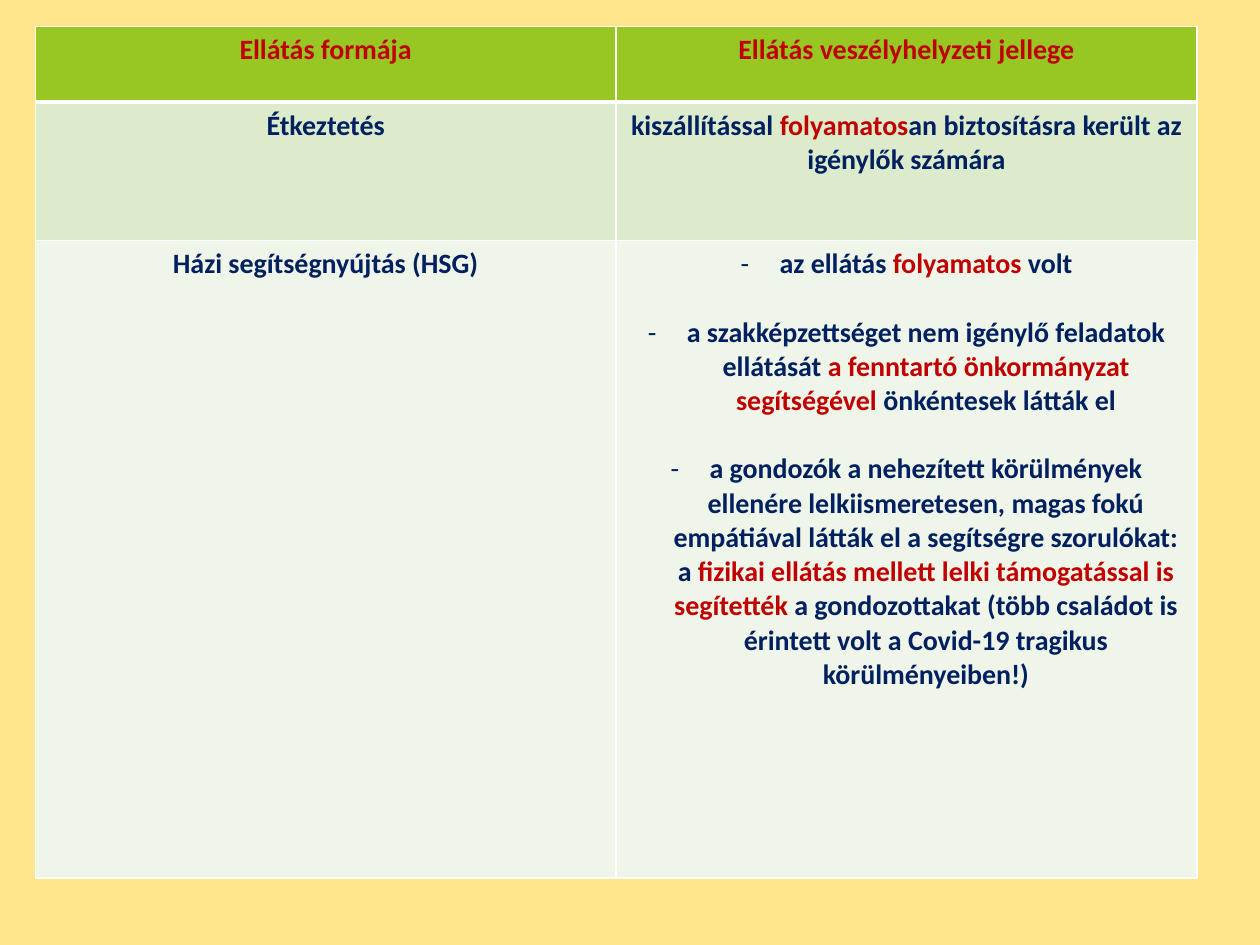
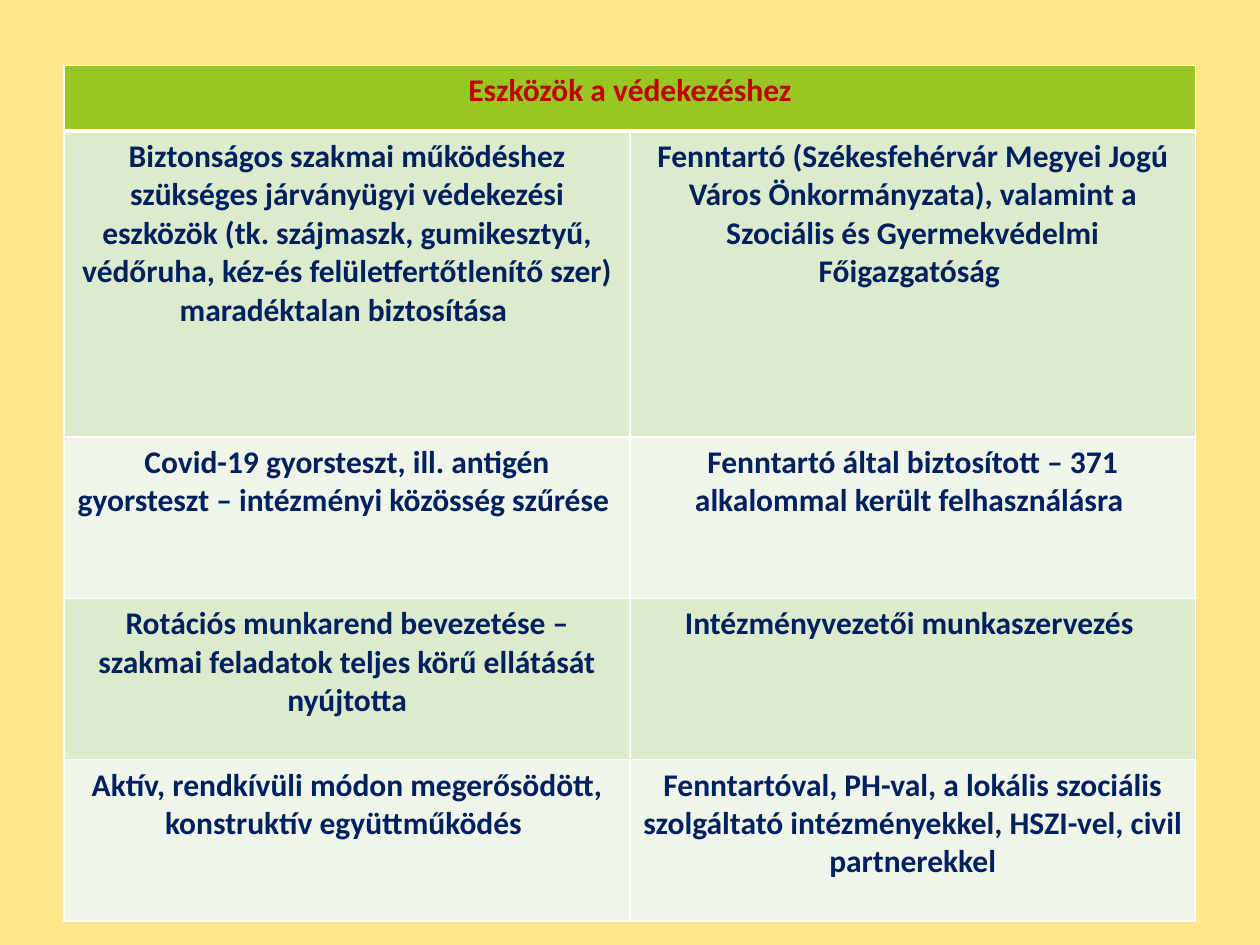
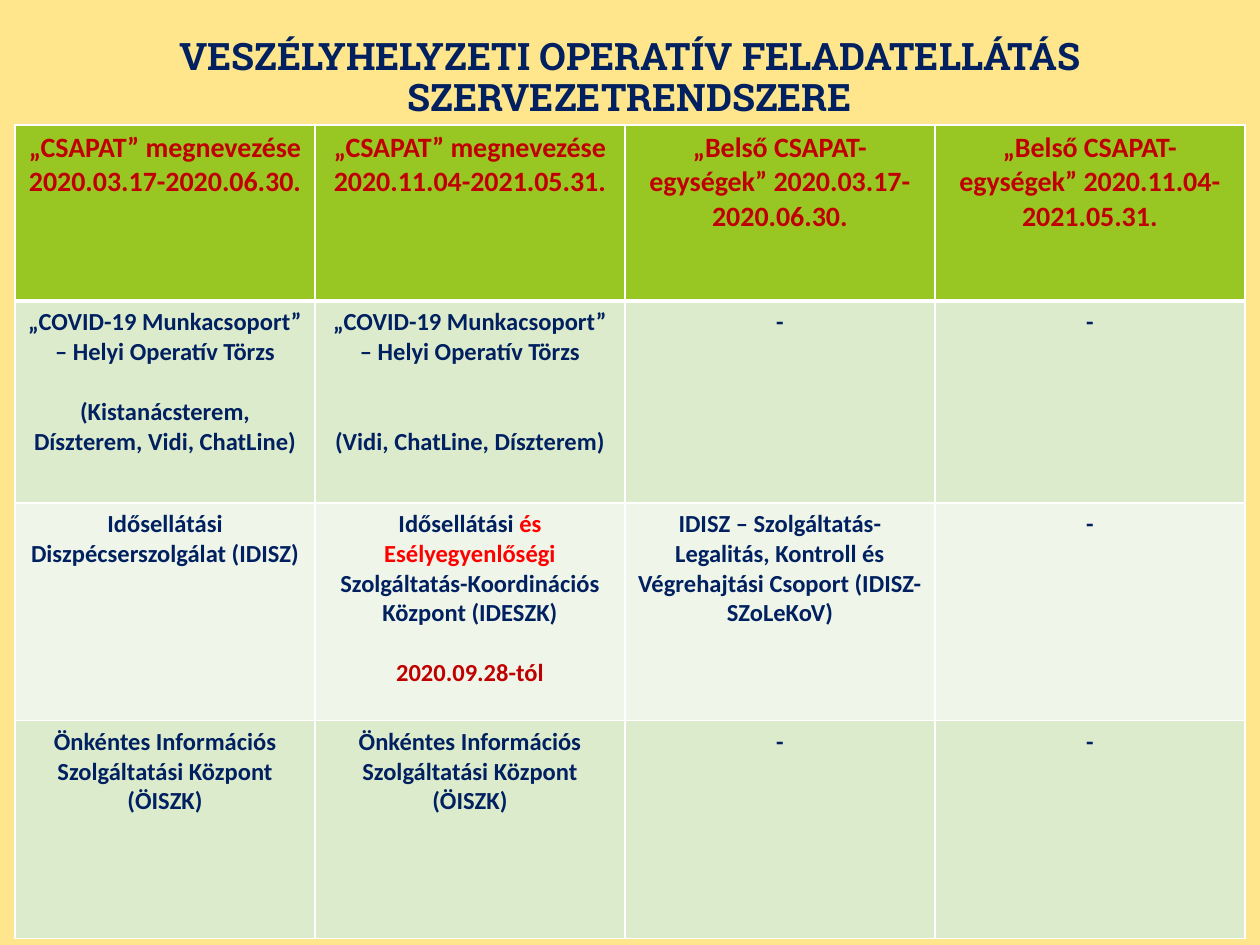
from dataclasses import dataclass

from lxml.etree import SubElement
from pptx import Presentation
from pptx.dml.color import RGBColor
from pptx.enum.text import MSO_ANCHOR, PP_ALIGN
from pptx.oxml.ns import qn
from pptx.util import Inches, Pt

CREAM = RGBColor(0xFF, 0xE6, 0x8C)
HEADER_GREEN = RGBColor(0x98, 0xC7, 0x23)
BANDS = (RGBColor(0xDD, 0xEB, 0xCD), RGBColor(0xEF, 0xF5, 0xE8))
NAVY = RGBColor(0x00, 0x20, 0x60)
DARK_RED = RGBColor(0xC0, 0x00, 0x00)
BRIGHT_RED = RGBColor(0xFF, 0x00, 0x00)
WHITE = RGBColor(0xFF, 0xFF, 0xFF)
TABLE_FONT = "Calibri"
TITLE_FONT = "Roboto Slab"
LINE_FACTOR = 1.22
DASH_INDENT = Inches(0.31)


@dataclass
class Span:
    text: str
    color: RGBColor = DARK_RED


@dataclass
class Line:
    spans: tuple
    gap_lines: int = 0
    dash: bool = False


CARE_ROWS = [
    ["Ellátás formája", "Ellátás veszélyhelyzeti jellege"],
    ["Étkeztetés", [Line(("kiszállítással ", Span("folyamatos"),
                          "an biztosításra került az igénylők számára"))]],
    ["Házi segítségnyújtás (HSG)", [
        Line(("az ellátás ", Span("folyamatos"), " volt"), dash=True),
        Line(("a szakképzettséget nem igénylő feladatok ellátását ",
              Span("a fenntartó önkormányzat segítségével"),
              " önkéntesek látták el"), gap_lines=1, dash=True),
        Line(("a gondozók a nehezített körülmények ellenére lelkiismeretesen, "
              "magas fokú empátiával látták el a segítségre szorulókat: a ",
              Span("fizikai ellátás mellett lelki támogatással is segítették"),
              " a gondozottakat (több családot is érintett volt a Covid-19 "
              "tragikus körülményeiben!)"), gap_lines=1, dash=True),
    ]],
]

SUPPLY_ROWS = [
    ["Eszközök a védekezéshez"],
    ["Biztonságos szakmai működéshez szükséges járványügyi védekezési eszközök "
     "(tk. szájmaszk, gumikesztyű, védőruha, kéz-és felületfertőtlenítő szer) "
     "maradéktalan biztosítása ",
     "Fenntartó (Székesfehérvár Megyei Jogú Város Önkormányzata), valamint a "
     "Szociális és Gyermekvédelmi Főigazgatóság "],
    ["Covid-19 gyorsteszt, ill. antigén gyorsteszt – intézményi közösség szűrése ",
     "Fenntartó által biztosított – 371 alkalommal került felhasználásra "],
    ["Rotációs munkarend bevezetése – szakmai feladatok teljes körű ellátását nyújtotta",
     "Intézményvezetői munkaszervezés "],
    ["Aktív, rendkívüli módon megerősödött, konstruktív együttműködés ",
     "Fenntartóval, PH-val, a lokális szociális szolgáltató intézményekkel, "
     "HSZI-vel, civil partnerekkel"],
]

TASK_FORCE = "„COVID-19 Munkacsoport” – Helyi Operatív Törzs"
VOLUNTEER_CENTRE = "Önkéntes Információs Szolgáltatási Központ (ÖISZK)"
TEAM_ROWS = [
    ["„CSAPAT” megnevezése 2020.03.17-2020.06.30.",
     "„CSAPAT” megnevezése 2020.11.04-2021.05.31.",
     "„Belső CSAPAT-egységek” 2020.03.17-2020.06.30.",
     "„Belső CSAPAT-egységek” 2020.11.04-2021.05.31."],
    [[Line((TASK_FORCE,)),
      Line(("(Kistanácsterem, Díszterem, Vidi, ChatLine)",), gap_lines=1)],
     [Line((TASK_FORCE,)), Line(("(Vidi, ChatLine, Díszterem)",), gap_lines=2)],
     "-", "-"],
    ["Idősellátási Diszpécserszolgálat (IDISZ)",
     [Line(("Idősellátási ", Span("és Esélyegyenlőségi ", BRIGHT_RED),
            "Szolgáltatás-Koordinációs Központ (IDESZK)")),
      Line((Span("2020.09.28-tól"),), gap_lines=1)],
     "IDISZ – Szolgáltatás-Legalitás, Kontroll és Végrehajtási Csoport (IDISZ-SZoLeKoV)",
     "-"],
    [VOLUNTEER_CENTRE, VOLUNTEER_CENTRE, "-", "-"],
]


def add_page(deck):
    page = deck.slides.add_slide(deck.slide_layouts[6])
    page.background.fill.solid()
    page.background.fill.fore_color.rgb = CREAM
    return page


def format_run(run, font_name, size, color):
    run.font.name = font_name
    run.font.size = Pt(size)
    run.font.bold = True
    run.font.color.rgb = color


def add_dash(para):
    properties = para._p.get_or_add_pPr()
    properties.set("marL", str(DASH_INDENT))
    properties.set("indent", str(-DASH_INDENT))
    SubElement(properties, qn("a:buFont"), typeface=TABLE_FONT)
    SubElement(properties, qn("a:buChar"), char="-")


def write_cell(cell, content, size, color):
    lines = [Line((content,))] if isinstance(content, str) else content
    frame = cell.text_frame
    for index, line in enumerate(lines):
        para = frame.add_paragraph() if index else frame.paragraphs[0]
        para.alignment = PP_ALIGN.CENTER
        if line.gap_lines:
            para.space_before = Pt(line.gap_lines * size * LINE_FACTOR)
        if line.dash:
            add_dash(para)
        for part in line.spans:
            span = part if isinstance(part, Span) else Span(part, color)
            run = para.add_run()
            run.text = span.text
            format_run(run, TABLE_FONT, size, span.color)


def add_border(cell, side, width):
    border = SubElement(cell._tc.get_or_add_tcPr(), qn(f"a:ln{side}"), w=str(Pt(width)))
    fill = SubElement(border, qn("a:solidFill"))
    SubElement(fill, qn("a:srgbClr"), val=str(WHITE))


def style_cell(cell, row_index):
    top = 3 if row_index == 1 else 1
    bottom = 3 if row_index == 0 else 1
    for side, width in (("L", 1), ("R", 1), ("T", top), ("B", bottom)):
        add_border(cell, side, width)
    cell.fill.solid()
    cell.fill.fore_color.rgb = BANDS[(row_index - 1) % 2] if row_index else HEADER_GREEN


def add_banded_table(page, left, top, widths, heights, rows, header_size, body_size):
    table = page.shapes.add_table(
        len(heights), len(widths), Inches(left), Inches(top),
        Inches(sum(widths)), Inches(sum(heights))).table
    for column, width in zip(table.columns, widths):
        column.width = Inches(width)
    for row_index, (row, height) in enumerate(zip(table.rows, heights)):
        row.height = Inches(height)
        size, color = (body_size, NAVY) if row_index else (header_size, DARK_RED)
        for cell in row.cells:
            style_cell(cell, row_index)
        for cell, content in zip(row.cells, rows[row_index]):
            write_cell(cell, content, size, color)
    if len(rows[0]) == 1:
        table.cell(0, 0).merge(table.cell(0, len(widths) - 1))


def add_title(page, text):
    box = page.shapes.add_textbox(Inches(0.5), Inches(0.17), Inches(9), Inches(0.83))
    frame = box.text_frame
    frame.word_wrap = True
    frame.vertical_anchor = MSO_ANCHOR.BOTTOM
    frame.text = text
    para = frame.paragraphs[0]
    para.alignment = PP_ALIGN.CENTER
    para.line_spacing = 0.9
    format_run(para.runs[0], TITLE_FONT, 21.6, NAVY)


def main():
    deck = Presentation()
    deck.slide_width = Inches(10)
    deck.slide_height = Inches(7.5)

    add_banded_table(add_page(deck), 0.28, 0.21, [4.61] * 2, [0.6, 1.1, 5.06],
                     CARE_ROWS, 16, 16)
    add_banded_table(add_page(deck), 0.51, 0.52, [4.49] * 2, [0.52, 2.43] + [1.28] * 3,
                     SUPPLY_ROWS, 18, 18)

    team_page = add_page(deck)
    add_title(team_page, "VESZÉLYHELYZETI OPERATÍV FELADATELLÁTÁS SZERVEZETRENDSZERE")
    add_banded_table(team_page, 0.12, 0.99, [2.38] + [2.46] * 3, [1.4, 1.6, 1.73, 1.73],
                     TEAM_ROWS, 16, 14)

    deck.save("out.pptx")


if __name__ == "__main__":
    main()
